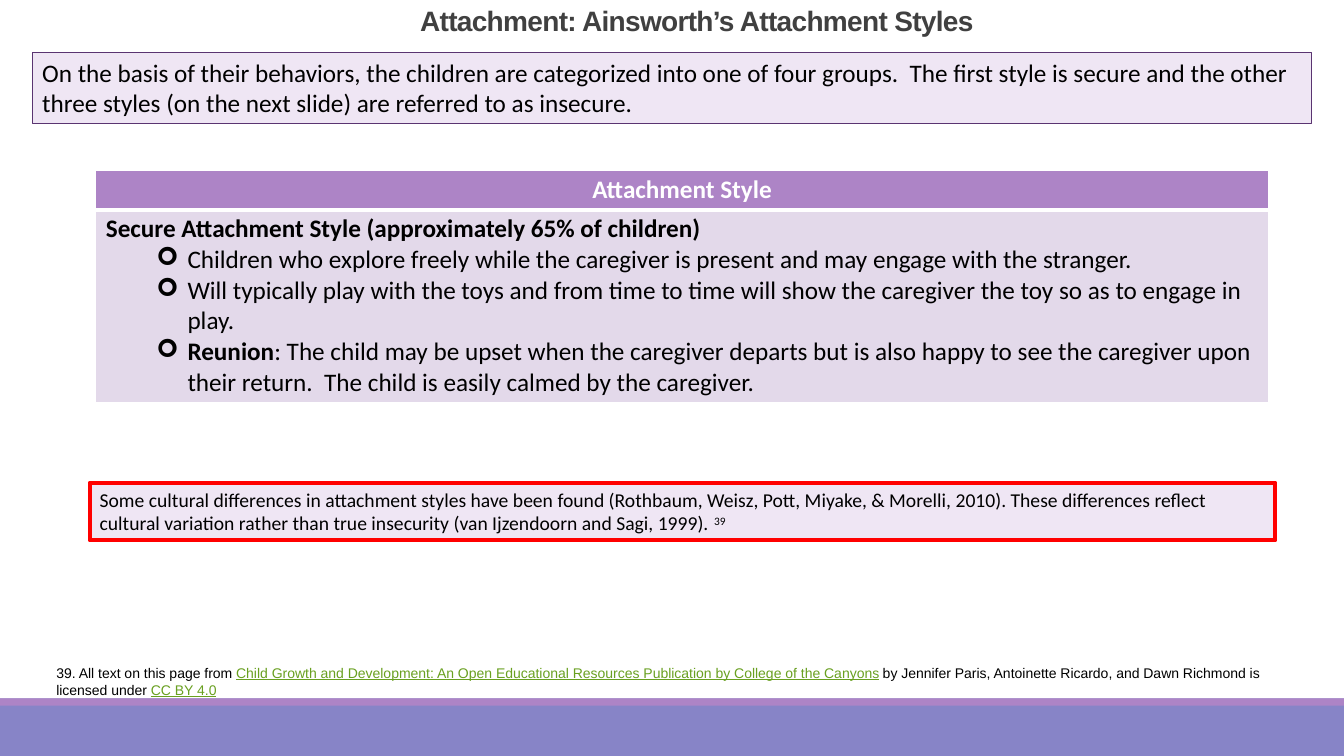
from lxml import etree
from pptx import Presentation
from pptx import util as u
from pptx.dml.color import RGBColor
from pptx.enum import shapes, text
from pptx.oxml.ns import qn

COLORS = {
    "black": "000000", "white": "FFFFFF", "title": "404040", "link": "69A020",
    "base": "8784C7", "accent": "AD84C6", "panel": "EFE6F4",
    "panel_line": "5A3471", "alert": "FF0000", "row": "E3D9EA",
}


def rgb(name):
    return RGBColor.from_string(COLORS[name])


def add_run(p, content, size=18, font="Calibri", color="black", bold=False,
            underline=False, baseline=None, spacing=None):
    r = p.add_run()
    r.text = content
    f = r.font
    f.size, f.name, f.bold, f.underline = u.Pt(size), font, bold, underline
    f.color.rgb = rgb(color)
    for key, value in (("baseline", baseline), ("spc", spacing)):
        if value is not None:
            r._r.get_or_add_rPr().set(key, str(value))
    return r


def add_bullet(p, char="➢", left=0.81, hanging=0.31):
    p.level = 1
    pPr = p._p.get_or_add_pPr()
    pPr.set("marL", str(u.Inches(left)))
    pPr.set("indent", str(-u.Inches(hanging)))
    etree.SubElement(pPr, qn("a:buFont")).set("typeface", "Wingdings")
    etree.SubElement(pPr, qn("a:buChar")).set("char", char)


def set_borders(cell, bottom):
    tcPr = cell._tc.get_or_add_tcPr()
    widths = {"lnL": 1, "lnR": 1, "lnT": 1, "lnB": bottom}
    for i, (tag, width) in enumerate(widths.items()):
        ln = etree.Element(qn("a:" + tag), w=str(u.Pt(width)))
        fill = etree.SubElement(ln, qn("a:solidFill"))
        etree.SubElement(fill, qn("a:srgbClr")).set("val", COLORS["white"])
        tcPr.insert(i, ln)


class SlideBuilder:
    def __init__(self, prs):
        self.slide = prs.slides.add_slide(prs.slide_layouts[6])

    def rect(self, box, fill, line=None, width=0.75):
        sp = self.slide.shapes.add_shape(
            shapes.MSO_SHAPE.RECTANGLE, *map(u.Inches, box))
        sp.shadow.inherit = False
        sp.fill.solid()
        sp.fill.fore_color.rgb = rgb(fill)
        if line:
            sp.line.color.rgb = rgb(line)
            sp.line.width = u.Pt(width)
        else:
            sp.line.fill.background()
        return sp

    def fill_text(self, sp, runs, align=text.PP_ALIGN.LEFT,
                  anchor=text.MSO_ANCHOR.TOP, **style):
        tf = sp.text_frame
        tf.word_wrap = True
        tf.vertical_anchor = anchor
        p = tf.paragraphs[0]
        p.alignment = align
        for content, extra in runs:
            add_run(p, content, **{**style, **extra})
        return p

    def panel(self, box, runs, line, width, size):
        self.fill_text(self.rect(box, "panel", line, width), runs, size=size)

    def textbox(self, box, runs, **style):
        sp = self.slide.shapes.add_textbox(*map(u.Inches, box))
        return self.fill_text(sp, runs, **style)

    def table(self, box, header, heading, bullets, heights):
        table = self.slide.shapes.add_table(
            len(heights), 1, *map(u.Inches, box)).table
        for row, height, fill, bottom in zip(
                table.rows, heights, ("accent", "row"), (3, 1)):
            row.height = u.Inches(height)
            cell = row.cells[0]
            cell.margin_top = cell.margin_bottom = u.Inches(0.04)
            cell.fill.solid()
            cell.fill.fore_color.rgb = rgb(fill)
            set_borders(cell, bottom)
        p = table.cell(0, 0).text_frame.paragraphs[0]
        p.alignment = text.PP_ALIGN.CENTER
        add_run(p, header, color="white", bold=True)
        tf = table.cell(1, 0).text_frame
        add_run(tf.paragraphs[0], heading, bold=True)
        for runs in bullets:
            p = tf.add_paragraph()
            add_bullet(p)
            for content, bold in runs:
                add_run(p, content, bold=bold)


def main():
    prs = Presentation()
    prs.slide_width, prs.slide_height = u.Inches(13.33), u.Inches(7.5)
    s = SlideBuilder(prs)

    # Footer bands
    s.rect((0, 6.93, 13.33, 0.57), "base")
    s.rect((0, 6.93, 13.33, 0.07), "accent")

    # Introduction
    s.panel((0.32, 0.52, 12.69, 0.71), [(
        "On the basis of their behaviors, the children are categorized into "
        "one of four groups.  The first style is secure and the other three "
        "styles (on the next slide) are referred to as insecure.", {})],
        "panel_line", 0.75, 18)

    # Attachment style table
    s.table(
        (0.95, 1.69, 11.63, 2.3), "Attachment Style",
        "Secure Attachment Style (approximately 65% of children)",
        [
            [("Children who explore freely while the caregiver is present "
              "and may engage with the stranger.", False)],
            [("Will typically play with the toys and from time to time will "
              "show the caregiver the toy so as to engage in play.", False)],
            [("Reunion", True),
             (": The child may be upset when the caregiver departs but is "
              "also happy to see the caregiver upon their return.  The child "
              "is easily calmed by the caregiver.", False)],
        ], (0.39, 1.91))

    # Cultural note
    s.panel((0.89, 4.79, 11.76, 0.57), [
        ("Some cultural differences in attachment styles have been found "
         "(Rothbaum, Weisz, Pott, Miyake, & Morelli, 2010). These differences "
         "reflect cultural variation rather than true insecurity (van "
         "Ijzendoorn and Sagi, 1999). ", {}),
        ("39", {"baseline": 30000})], "alert", 3, 14)

    # Source line
    link = {"color": "link", "underline": True}
    s.textbox((0.46, 6.54, 12.41, 0.44), [
        ("39. All text on this page from ", {}),
        ("Child Growth and Development: An Open Educational Resources "
         "Publication by College of the Canyons", link),
        (" by Jennifer Paris, Antoinette Ricardo, and Dawn Richmond is "
         "licensed under ", {}),
        ("CC BY 4.0", link)], size=10, font="Arial")

    # Title
    p = s.textbox((3.1, 0, 7.63, 0.42),
                  [(" Attachment: Ainsworth’s Attachment Styles ", {})],
                  align=text.PP_ALIGN.CENTER, anchor=text.MSO_ANCHOR.BOTTOM,
                  size=20, font="Arial", color="title", bold=True, spacing=-50)
    p.line_spacing = 0.85

    prs.save("out.pptx")


if __name__ == "__main__":
    main()
